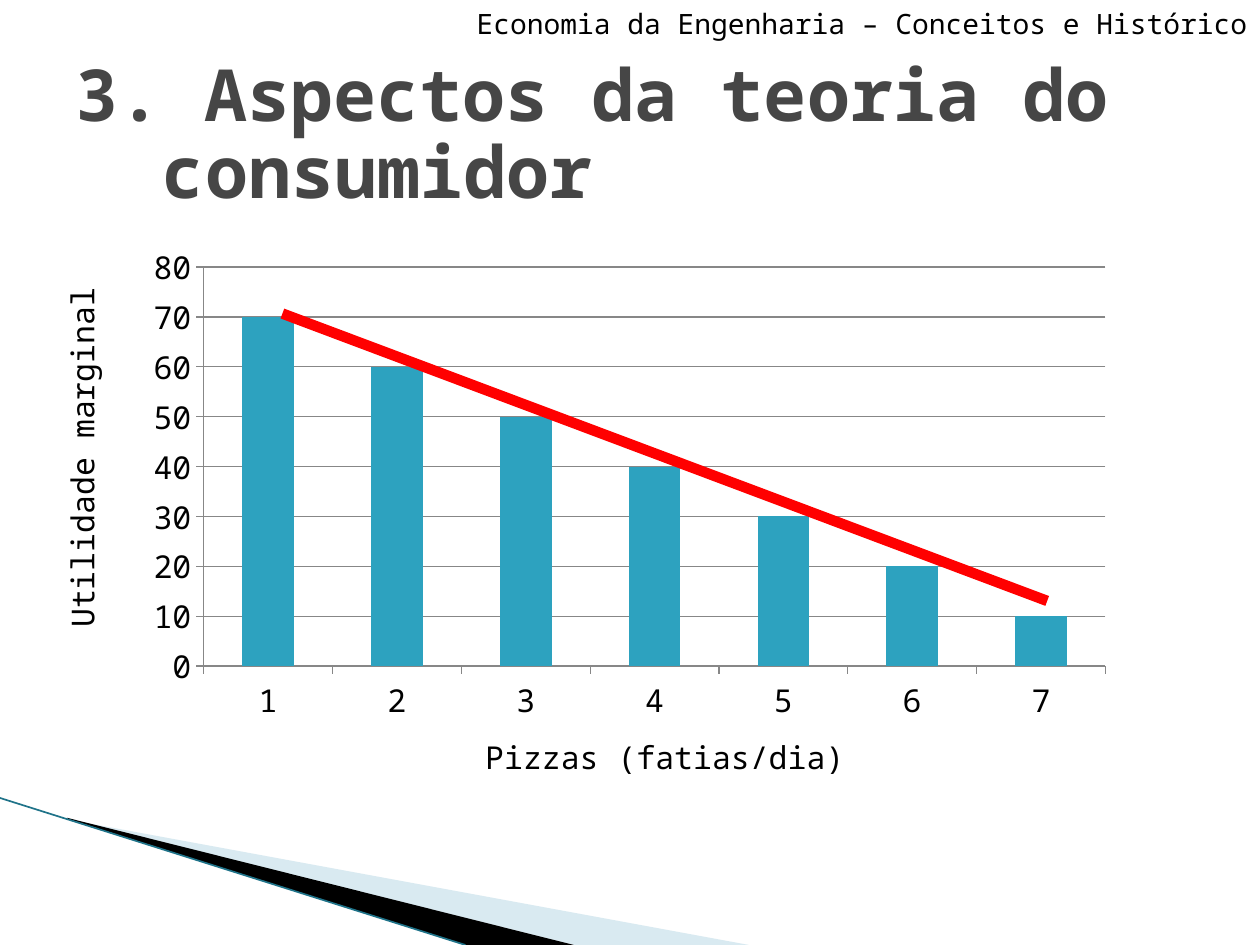
from lxml.etree import SubElement
from pptx import Presentation
from pptx.chart.data import CategoryChartData
from pptx.dml.color import RGBColor
from pptx.enum.chart import XL_CHART_TYPE, XL_TICK_MARK
from pptx.enum.shapes import MSO_CONNECTOR
from pptx.enum.text import MSO_ANCHOR, PP_ALIGN
from pptx.oxml.ns import qn
from pptx.util import Pt

FONT = "Noto Sans Mono"
COLORS = {
    "text": "000000", "title": "464646", "bar": "2DA2BF", "grid": "878787",
    "trend": "FF0000", "pale": "A0CBDC", "dark": "000000", "edge": "1F7389",
}


def rgb(name):
    """Return the named palette colour."""
    return RGBColor.from_string(COLORS[name])


def set_font(font, size, color="text", bold=False):
    """Apply the slide typeface to a font."""
    font.name, font.size, font.bold = FONT, Pt(size), bold
    font.color.rgb = rgb(color)


def add_text(s, box, text, size, align, color="text", bold=False):
    """Add a wrapped one-paragraph text box."""
    sp = s.shapes.add_textbox(*map(Pt, box))
    tf = sp.text_frame
    tf.word_wrap = True
    p = tf.paragraphs[0]
    p.text, p.alignment = text, align
    set_font(p.font, size, color, bold)
    return sp


def add_line(s, start, end, color, width):
    """Add a straight line without a shadow."""
    cx = s.shapes.add_connector(MSO_CONNECTOR.STRAIGHT, *map(Pt, start + end))
    cx.line.color.rgb, cx.line.width = rgb(color), Pt(width)
    SubElement(cx._element.spPr, qn("a:effectLst"))


def add_wedge(s, points, color, opacity=100):
    """Add a filled polygon without an outline."""
    start, *rest = [(Pt(x), Pt(y)) for x, y in points]
    fb = s.shapes.build_freeform(*start)
    fb.add_line_segments(rest, close=True)
    sp = fb.convert_to_shape()
    sp.shadow.inherit = False
    sp.fill.solid()
    sp.fill.fore_color.rgb = rgb(color)
    sp.line.fill.background()
    if opacity < 100:
        clr = sp._element.spPr.find(qn("a:solidFill"))[0]
        SubElement(clr, qn("a:alpha"), val=str(opacity * 1000))


def add_corner(s, box):
    """Draw the decorative wedges in the bottom left corner."""
    x, y, w, h = box
    bottom = y + h
    add_wedge(s, [(x + 39.6, y + 12.5), (x + w, bottom),
                  (x + 328, bottom), (x + 39.6, y + 12)], "pale", 40)
    add_wedge(s, [(x + 38.2, y + 11.3), (x + 328, bottom),
                  (x + 266, bottom), (x + 38.9, y + 12)], "dark")
    add_line(s, (x, y), (x + 266, bottom), "edge", 0.95)


def add_heading(s, box):
    """Place the running header and the hanging-indent title."""
    x, y, w, h = box
    sp = add_text(s, (x + 36, y + 21.6, w - 72, h - 21.6),
                  "3. Aspectos da teoria do consumidor", 41,
                  PP_ALIGN.LEFT, "title", True)
    sp.text_frame.vertical_anchor = MSO_ANCHOR.MIDDLE
    p = sp.text_frame.paragraphs[0]
    p.line_spacing = 0.9
    pPr = p._p.get_or_add_pPr()
    pPr.set("marL", str(Pt(49.5)))
    pPr.set("indent", str(-Pt(49.5)))
    add_text(s, (x, y, w, 26.6), "Economia da Engenharia – Conceitos e Histórico",
             16, PP_ALIGN.RIGHT)


def add_utility_chart(s, box):
    """Place the marginal utility columns, axis captions and trend line."""
    x, y, w, h = box
    data = CategoryChartData()
    data.categories = [str(n) for n in range(1, 8)]
    data.add_series("Series 1", range(70, 0, -10))
    chart = s.shapes.add_chart(XL_CHART_TYPE.COLUMN_CLUSTERED,
                               *map(Pt, (x + 44, y, w - 44, h - 28)), data).chart
    chart.has_legend = chart.has_title = False
    set_font(chart.font, 18)
    plot = chart.plots[0]
    plot.gap_width, plot.vary_by_categories = 150, False
    fill = plot.series[0].format.fill
    fill.solid()
    fill.fore_color.rgb = rgb("bar")
    for axis in (chart.category_axis, chart.value_axis):
        axis.major_tick_mark = XL_TICK_MARK.OUTSIDE
        axis.format.line.color.rgb = rgb("grid")
    axis = chart.value_axis
    axis.minimum_scale, axis.maximum_scale, axis.major_unit = 0, 80, 10
    axis.major_gridlines.format.line.color.rgb = rgb("grid")

    add_text(s, (x + 95, y + h - 28, 505, 29), "Pizzas (fatias/dia)",
             18, PP_ALIGN.CENTER)
    sp = add_text(s, (x, y + 16.5, 36, 221), "Utilidade marginal",
                  18, PP_ALIGN.CENTER)
    sp.text_frame._txBody.bodyPr.set("vert", "vert270")
    add_line(s, (x + 129, y + 44.6), (x + 566, y + 208.8), "trend", 6)


def main():
    """Build and save the slide."""
    prs = Presentation()
    prs.slide_width, prs.slide_height = Pt(720), Pt(540)
    s = prs.slides.add_slide(prs.slide_layouts[6])
    add_corner(s, (0, 456, 428, 84))
    add_heading(s, (0, 0, 720, 134.6))
    add_utility_chart(s, (32.4, 134.6, 610.6, 311.6))
    prs.save("out.pptx")


if __name__ == "__main__":
    main()
